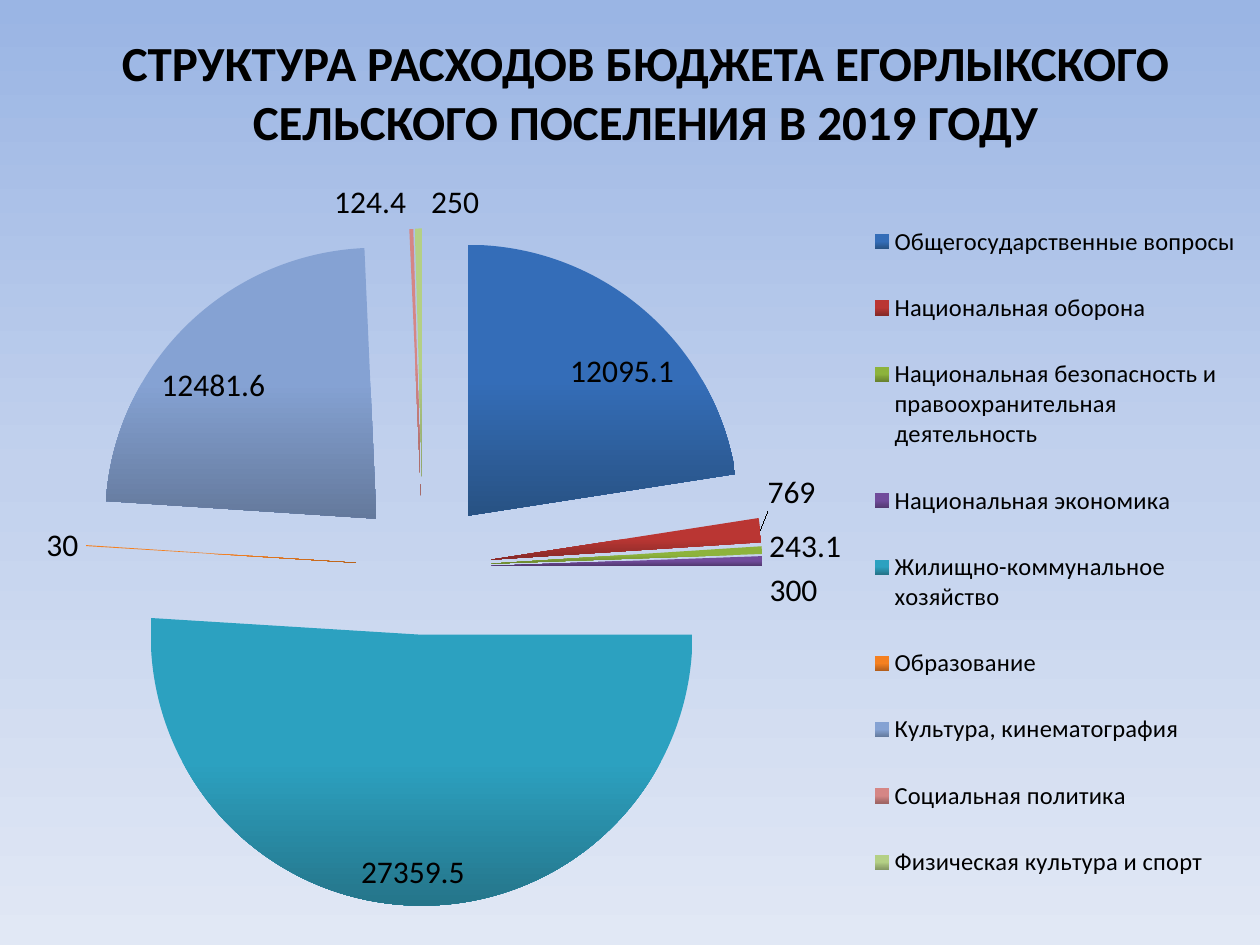
from copy import deepcopy

from lxml import etree
from pptx import Presentation
from pptx import util as u
from pptx.chart.data import CategoryChartData
from pptx.dml.color import RGBColor
from pptx.enum import chart as kinds
from pptx.enum import text
from pptx.oxml import parse_xml
from pptx.oxml.ns import nsdecls, qn

BLACK = RGBColor(0x00, 0x00, 0x00)
SKY = [RGBColor(0x9A, 0xB5, 0xE4), RGBColor(0xC2, 0xD1, 0xED), RGBColor(0xE1, 0xE8, 0xF5)]
FONT = "Calibri"
TITLE = "СТРУКТУРА РАСХОДОВ БЮДЖЕТА ЕГОРЛЫКСКОГО СЕЛЬСКОГО ПОСЕЛЕНИЯ В 2019 ГОДУ"
EXPENSES = [
    ("Общегосударственные вопросы", 12095.1, RGBColor(0x34, 0x6D, 0xB8), RGBColor(0x28, 0x52, 0x83)),
    ("Национальная оборона", 769, RGBColor(0xBA, 0x36, 0x33), RGBColor(0x86, 0x2A, 0x28)),
    ("Национальная безопасность и правоохранительная деятельность", 243.1,
     RGBColor(0x8D, 0xB3, 0x3C), RGBColor(0x69, 0x83, 0x2F)),
    ("Национальная экономика", 300, RGBColor(0x70, 0x4B, 0x9B), RGBColor(0x52, 0x39, 0x70)),
    ("Жилищно-коммунальное хозяйство", 27359.5, RGBColor(0x2C, 0xA1, 0xC0), RGBColor(0x25, 0x75, 0x8A)),
    ("Образование", 30, RGBColor(0xF5, 0x80, 0x20), RGBColor(0xB4, 0x5F, 0x1C)),
    ("Культура, кинематография", 12481.6, RGBColor(0x85, 0xA2, 0xD3), RGBColor(0x64, 0x79, 0x9C)),
    ("Социальная политика", 124.4, RGBColor(0xD5, 0x86, 0x85), RGBColor(0x9E, 0x65, 0x64)),
    ("Физическая культура и спорт", 250, RGBColor(0xB4, 0xD0, 0x85), RGBColor(0x86, 0x9A, 0x65)),
]


def shade(fill, colors):
    """Fill from top to bottom with evenly spaced colours."""
    fill.gradient()
    fill.gradient_angle = 270
    first = fill.gradient_stops[0]
    stop_list = fill._fill._gradFill.find(qn("a:gsLst"))
    model = deepcopy(stop_list[0])
    while len(stop_list) < len(colors):
        stop_list.append(deepcopy(model))
    for index, (stop, color) in enumerate(zip(fill.gradient_stops, colors)):
        stop.color.rgb = color
        stop.position = index / (len(colors) - 1)


def style_font(font, size, bold=False):
    """Set the common face and colour at a given size."""
    font.name, font.size, font.bold = FONT, u.Pt(size), bold
    font.color.rgb = BLACK


def add_title(page):
    """Place and format the title."""
    box = page.shapes.title
    box.left, box.top, box.width, box.height = u.Cm(2.11), u.Cm(0.53), u.Cm(21.8), u.Cm(2.64)
    frame = box.text_frame
    frame.text = TITLE
    frame.word_wrap = True
    frame.auto_size = text.MSO_AUTO_SIZE.SHAPE_TO_FIT_TEXT
    frame.vertical_anchor = text.MSO_ANCHOR.MIDDLE
    para = frame.paragraphs[0]
    para.alignment = text.PP_ALIGN.CENTER
    style_font(para.font, 28, True)
    outline = parse_xml(
        f'<a:ln {nsdecls("a")} w="17780"><a:solidFill><a:srgbClr val="FFFFFF"/></a:solidFill></a:ln>')
    para.runs[0].font._element.insert(0, outline)


def set_layout(parent, left, top, width, height, inner=False):
    """Fix the place of a chart part as fractions of the chart."""
    for old in parent.findall(qn("c:layout")):
        parent.remove(old)
    layout = etree.Element(qn("c:layout"))
    manual = etree.SubElement(layout, qn("c:manualLayout"))
    entries = [("layoutTarget", "inner")] if inner else []
    entries += [("xMode", "edge"), ("yMode", "edge"), ("x", left), ("y", top), ("w", width), ("h", height)]
    for name, value in entries:
        etree.SubElement(manual, qn(f"c:{name}")).set("val", str(value))
    before = parent.find(qn("c:legendPos"))
    parent.insert(0 if before is None else parent.index(before) + 1, layout)


def add_expense_pie(page):
    """Add the exploded pie of expenses with its legend."""
    data = CategoryChartData()
    data.categories = [name for name, *_ in EXPENSES]
    data.add_series("Series 1", [value for _, value, *_ in EXPENSES])
    chart = page.shapes.add_chart(
        kinds.XL_CHART_TYPE.PIE_EXPLODED, u.Cm(0.1), u.Cm(3.38), u.Cm(25.2), u.Cm(15.34), data).chart
    chart.has_title = False
    style_font(chart.font, 18)
    plot = chart.plots[0]
    plot.vary_by_categories = True
    series = plot.series[0]
    series._element.find(qn("c:explosion")).set("val", "25")
    for index, (_, _, light, dark) in enumerate(EXPENSES):
        shade(series.points[index].format.fill, [light, light, dark])
    labels = series.data_labels
    labels.show_value = True
    labels.position = kinds.XL_LABEL_POSITION.BEST_FIT
    style_font(labels.font, 18)
    chart.has_legend = True
    legend = chart.legend
    legend.position = kinds.XL_LEGEND_POSITION.RIGHT
    legend.include_in_layout = False
    style_font(legend.font, 14)
    set_layout(legend._element, 0.69, 0.03, 0.3, 0.95)
    set_layout(chart._chartSpace.chart.plotArea, 0.06, 0.08, 0.55, 0.89, True)


def main():
    """Build and save the slide."""
    deck = Presentation()
    deck.slide_width, deck.slide_height = u.Cm(25.4), u.Cm(19.05)
    page = deck.slides.add_slide(deck.slide_layouts[5])
    shade(page.background.fill, SKY)
    add_title(page)
    add_expense_pie(page)
    deck.save("out.pptx")


if __name__ == "__main__":
    main()
